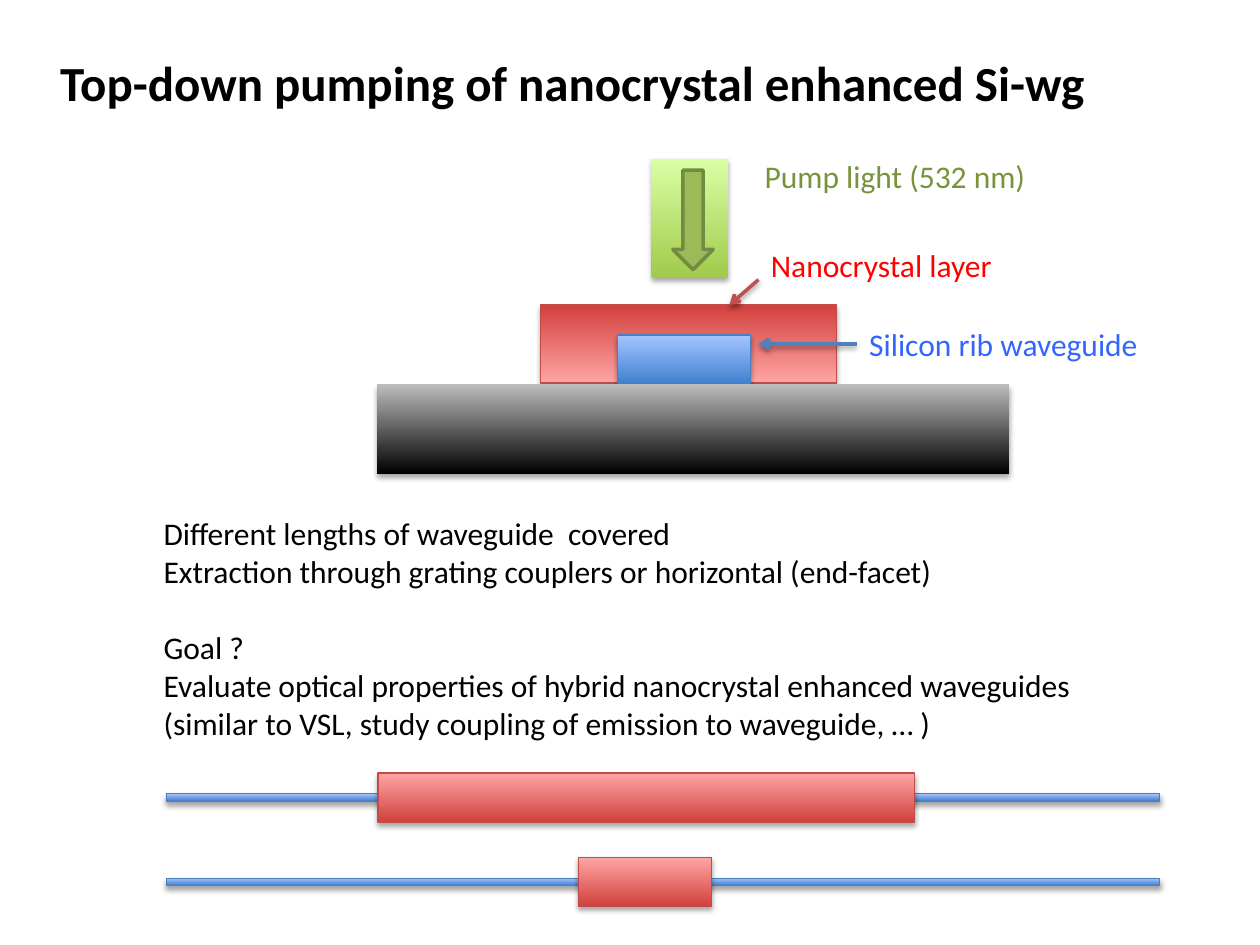
import dataclasses
import typing

import pptx
import pptx.dml.color
import pptx.enum.shapes
import pptx.enum.text
import pptx.oxml
import pptx.oxml.ns
import pptx.util

Inches = pptx.util.Inches
Pt = pptx.util.Pt
FONT = "Calibri"
HEX = {
    "black": "000000", "gray": "BDBDBD",
    "red dark": "D1403C", "red light": "FFA6A5", "red edge": "BF4C48",
    "blue dark": "3F80CE", "blue light": "A4C4FF", "blue edge": "4B7EBC",
    "green dark": "A0CA4A", "green light": "DAFFA5",
    "beam": "9BBB59", "beam edge": "738A42",
    "red arrow": "C0504D", "blue arrow": "4F81BD",
    "pump text": "77933C", "layer text": "FF0000", "guide text": "3366FF",
}


@dataclasses.dataclass
class Style:
    low: str
    high: str
    edge: typing.Optional[str] = None


@dataclasses.dataclass
class Block:
    left: float
    top: float
    width: float
    height: float
    style: Style


@dataclasses.dataclass
class Label:
    left: float
    top: float
    width: float
    height: float
    lines: list[str]
    color: str = "black"
    size: int = 18
    bold: bool = False


@dataclasses.dataclass
class Arrow:
    start: tuple[float, float]
    end: tuple[float, float]
    color: str


RED = Style("red dark", "red light", "red edge")
RED_FLIP = Style("red light", "red dark", "red edge")
BLUE = Style("blue dark", "blue light", "blue edge")
GRAY = Style("black", "gray")
GREEN = Style("green dark", "green light")

STRIP_LEFT, STRIP_WIDTH, STRIP_HEIGHT = 1.32, 7.88, 0.06
COVER_HEIGHT = 0.39
# Middle of each strip, then left and width of its cover
STRIPS = [(6.33, 3, 4.26), (7, 4.59, 1.06)]

STACK = [
    Block(4.29, 2.42, 2.35, 0.62, RED_FLIP),
    Block(4.9, 2.66, 1.06, 0.39, BLUE),
    Block(2.99, 3.05, 5.02, 0.71, GRAY),
    Block(5.17, 1.26, 0.61, 0.95, GREEN),
]
ARROWS = [
    Arrow((6.8, 2.73), (6.02, 2.73), "blue arrow"),
    Arrow((6.02, 2.22), (5.79, 2.42), "red arrow"),
]
LABELS = [
    Label(0.38, 0.37, 8.44, 0.57,
          ["Top-down pumping of nanocrystal enhanced Si-wg"], size=28, bold=True),
    Label(5.97, 1.2, 3.35, 0.4, ["Pump light (532 nm)"], "pump text"),
    Label(6.02, 1.9, 3.35, 0.4, ["Nanocrystal layer"], "layer text"),
    Label(6.8, 2.53, 3.35, 0.4, ["Silicon rib waveguide"], "guide text"),
]
NOTES = Label(1.2, 4.03, 8, 1.92, [
    "Different lengths of waveguide  covered",
    "Extraction through grating couplers or horizontal (end-facet)",
    "Goal ?",
    "Evaluate optical properties of hybrid nanocrystal enhanced waveguides "
    "(similar to VSL, study coupling of emission to waveguide, … )",
])


def rgb(name: str) -> pptx.dml.color.RGBColor:
    return pptx.dml.color.RGBColor.from_string(HEX[name])


def add_shade(props, alpha: int, drop: float) -> None:
    """Put a soft shadow below the shape that owns these properties."""
    for old in props.findall(pptx.oxml.ns.qn("a:effectLst")):
        props.remove(old)
    props.append(pptx.oxml.parse_xml(
        f'<a:effectLst {pptx.oxml.ns.nsdecls("a")}>'
        f'<a:outerShdw blurRad="{Pt(3.1)}" dist="{Pt(drop)}" dir="5400000" rotWithShape="0">'
        f'<a:srgbClr val="{HEX["black"]}"><a:alpha val="{alpha * 1000}"/></a:srgbClr>'
        '</a:outerShdw></a:effectLst>'))


def add_block(slide, block: Block) -> None:
    shape = slide.shapes.add_shape(
        pptx.enum.shapes.MSO_SHAPE.RECTANGLE, Inches(block.left), Inches(block.top),
        Inches(block.width), Inches(block.height))
    style = block.style
    shape.fill.gradient()
    shape.fill.gradient_angle = 90
    for stop, place, name in zip(shape.fill.gradient_stops, (0, 1), (style.low, style.high)):
        stop.position = place
        stop.color.rgb = rgb(name)
    if style.edge:
        shape.line.color.rgb = rgb(style.edge)
        shape.line.width = Pt(0.75)
    else:
        shape.line.fill.background()
    add_shade(shape.element.spPr, 35, 1.8)


def add_strip(slide, middle: float, left: float, width: float) -> None:
    """Draw a long waveguide and the layer that covers part of it."""
    add_block(slide, Block(STRIP_LEFT, middle - STRIP_HEIGHT / 2,
                           STRIP_WIDTH, STRIP_HEIGHT, BLUE))
    add_block(slide, Block(left, middle - COVER_HEIGHT / 2, width, COVER_HEIGHT, RED))


def add_beam(slide) -> None:
    beam = slide.shapes.add_shape(
        pptx.enum.shapes.MSO_SHAPE.DOWN_ARROW,
        Inches(5.34), Inches(1.35), Inches(0.32), Inches(0.79))
    beam.shadow.inherit = False
    beam.fill.solid()
    beam.fill.fore_color.rgb = rgb("beam")
    beam.line.color.rgb = rgb("beam edge")
    beam.line.width = Pt(2)


def add_arrow(slide, arrow: Arrow) -> None:
    points = [Inches(value) for value in (*arrow.start, *arrow.end)]
    line = slide.shapes.add_connector(pptx.enum.shapes.MSO_CONNECTOR.STRAIGHT, *points)
    line.line.color.rgb = rgb(arrow.color)
    line.line.width = Pt(2)
    props = line.element.spPr
    props.find(pptx.oxml.ns.qn("a:ln")).append(pptx.oxml.parse_xml(
        f'<a:tailEnd {pptx.oxml.ns.nsdecls("a")} type="arrow"/>'))
    add_shade(props, 38, 1.6)


def add_label(slide, label: Label):
    box = slide.shapes.add_textbox(
        Inches(label.left), Inches(label.top), Inches(label.width), Inches(label.height))
    frame = box.text_frame
    frame.word_wrap = True
    frame.auto_size = pptx.enum.text.MSO_AUTO_SIZE.SHAPE_TO_FIT_TEXT
    frame.text = "\n".join(label.lines)
    for para in frame.paragraphs:
        for run in para.runs:
            run.font.name = FONT
            run.font.size = Pt(label.size)
            run.font.bold = label.bold
            run.font.color.rgb = rgb(label.color)
    return frame


def main() -> None:
    deck = pptx.Presentation()
    deck.slide_width, deck.slide_height = Inches(10), Inches(7.5)
    slide = deck.slides.add_slide(deck.slide_layouts[6])
    for block in STACK:
        add_block(slide, block)
    add_beam(slide)
    for strip in STRIPS:
        add_strip(slide, *strip)
    for arrow in ARROWS:
        add_arrow(slide, arrow)
    for label in LABELS:
        add_label(slide, label)
    notes = add_label(slide, NOTES)
    notes.paragraphs[2].space_before = Pt(22)
    deck.save("out.pptx")


if __name__ == "__main__":
    main()
